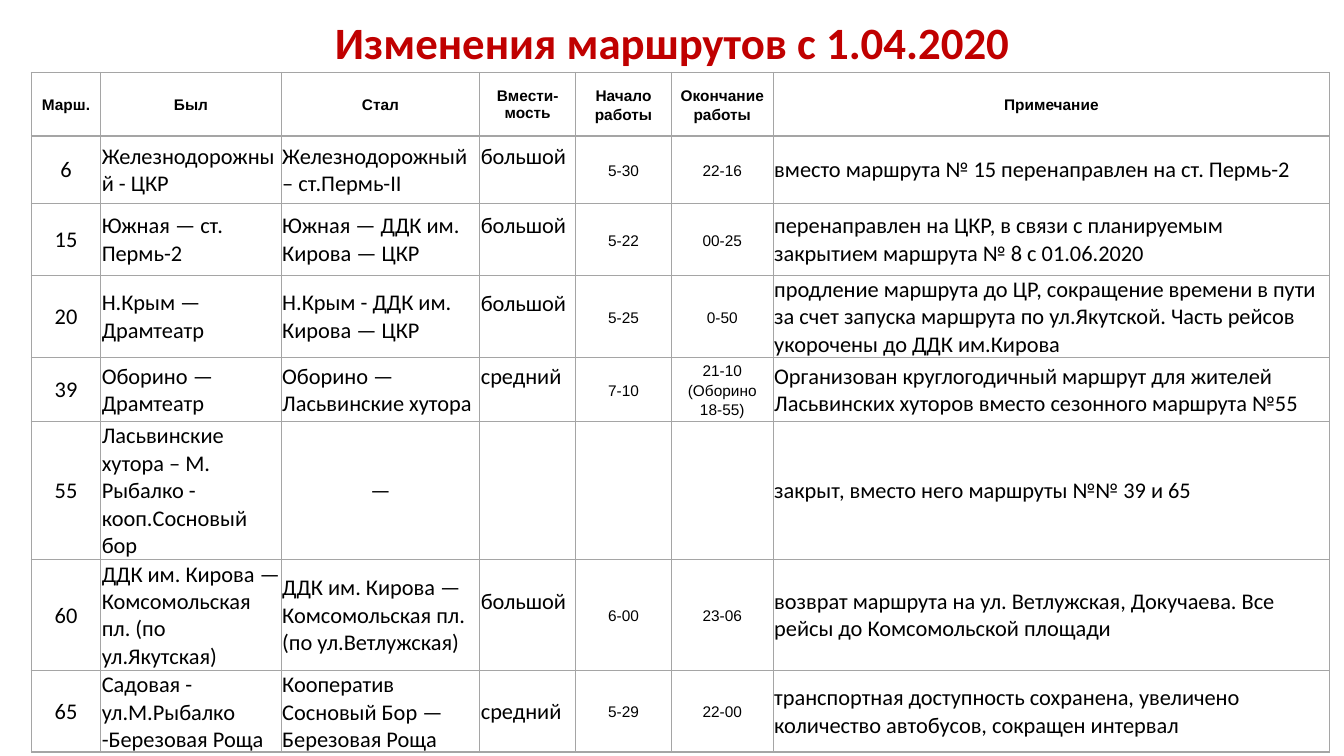
import pptx
import pptx.util
import pptx.dml.color
import pptx.enum.text
import lxml.etree
from pptx.util import Inches

COLORS = {"title": "C00000", "text": "000000", "line": "A5A5A5", "cell": "FFFFFF"}
ALIGN = pptx.enum.text.PP_ALIGN
MIDDLE = pptx.enum.text.MSO_ANCHOR.MIDDLE
rgb = pptx.dml.color.RGBColor.from_string


def write(frame, text, size=16, face="Calibri", color="text", bold=False,
          align=ALIGN.LEFT, lead=1.0):
    for i, line in enumerate(text.split("\n")):
        para = frame.paragraphs[0] if i == 0 else frame.add_paragraph()
        para.alignment = align
        para.line_spacing = lead
        run = para.add_run()
        run.text = line
        run.font.size = pptx.util.Pt(size)
        run.font.name = face
        run.font.bold = bold
        run.font.color.rgb = rgb(COLORS[color])


def frame_cell(cell):
    """Draw a thin line on all four sides of the cell."""
    ns = "{http://schemas.openxmlformats.org/drawingml/2006/main}"
    props = cell._tc.get_or_add_tcPr()
    for i, side in enumerate(("lnL", "lnR", "lnT", "lnB")):
        line = lxml.etree.Element(ns + side, w="12700")
        fill = lxml.etree.SubElement(line, ns + "solidFill")
        lxml.etree.SubElement(fill, ns + "srgbClr", val=COLORS["line"])
        props.insert(i, line)


deck = pptx.Presentation()
deck.slide_width = Inches(13.33)
deck.slide_height = Inches(7.5)
slide = deck.slides.add_slide(deck.slide_layouts[6])

title = slide.shapes.add_textbox(Inches(0.92), 0, Inches(11.5), Inches(0.9)).text_frame
title.word_wrap = True
title.vertical_anchor = MIDDLE
write(title, "Изменения маршрутов с 1.04.2020", size=32, color="title", bold=True,
      align=ALIGN.CENTER, lead=0.9)

widths = [0.69, 1.79, 1.97, 0.95, 0.95, 1.01, 5.52]
heights = [0.63, 0.67, 0.71, 0.82, 0.58, 1.37, 1.1, 0.8]
rows = [
    ["Марш.", "Был", "Стал", "Вмести-мость", "Начало работы", "Окончание работы",
     "Примечание"],
    ["6", "Железнодорожный - ЦКР", "Железнодорожный – ст.Пермь-II", "большой",
     "5-30", "22-16", "вместо маршрута № 15 перенаправлен на ст. Пермь-2"],
    ["15", "Южная — ст. Пермь-2", "Южная — ДДК им. Кирова — ЦКР", "большой",
     "5-22", "00-25", "перенаправлен на ЦКР, в связи с планируемым закрытием "
     "маршрута № 8 с 01.06.2020"],
    ["20", "Н.Крым — Драмтеатр", "Н.Крым - ДДК им. Кирова — ЦКР", "большой",
     "5-25", "0-50", "продление маршрута до ЦР, сокращение времени в пути за счет "
     "запуска маршрута по ул.Якутской. Часть рейсов укорочены до ДДК им.Кирова"],
    ["39", "Оборино — Драмтеатр", "Оборино — Ласьвинские хутора", "средний",
     "7-10", "21-10\n(Оборино 18-55)", "Организован круглогодичный маршрут для "
     "жителей Ласьвинских хуторов вместо сезонного маршрута №55"],
    ["55", "Ласьвинские хутора – М. Рыбалко - кооп.Сосновый бор", "—", "", "", "",
     "закрыт, вместо него маршруты №№ 39 и 65"],
    ["60", "ДДК им. Кирова — Комсомольская пл. (по ул.Якутская)",
     "ДДК им. Кирова — Комсомольская пл.(по ул.Ветлужская)", "большой",
     "6-00", "23-06", "возврат маршрута на ул. Ветлужская, Докучаева. Все рейсы до "
     "Комсомольской площади"],
    ["65", "Садовая - ул.М.Рыбалко -Березовая Роща",
     "Кооператив Сосновый Бор — Березовая Роща", "средний", "5-29", "22-00",
     "транспортная доступность сохранена, увеличено количество автобусов, "
     "сокращен интервал"],
]

table = slide.shapes.add_table(len(rows), len(widths), Inches(0.31), Inches(0.72),
                               Inches(sum(widths)), Inches(sum(heights))).table
table.first_row = False
table.horz_banding = False
for col, width in zip(table.columns, widths):
    col.width = Inches(width)
for row, height in zip(table.rows, heights):
    row.height = Inches(height)

for r, row in enumerate(rows):
    for c, text in enumerate(row):
        cell = table.cell(r, c)
        head, time = r == 0, c in (4, 5)
        raised = c == 3 and not head and row[0] != "65"
        cell.fill.solid()
        cell.fill.fore_color.rgb = rgb(COLORS["cell"])
        frame_cell(cell)
        cell.vertical_anchor = MIDDLE
        cell.margin_left = cell.margin_right = Inches(0.07 if time else 0.01)
        cell.margin_top = Inches(0 if time else 0.01)
        cell.margin_bottom = Inches(0.27 if raised else 0)
        if text:
            small = head or time
            center = small or c == 0 or text == "—"
            write(cell.text_frame, text, size=11 if small else 16,
                  face="Arial" if small else "Calibri", bold=head,
                  align=ALIGN.CENTER if center else ALIGN.LEFT,
                  lead=1.15 if time else 1.0)

deck.save("out.pptx")
